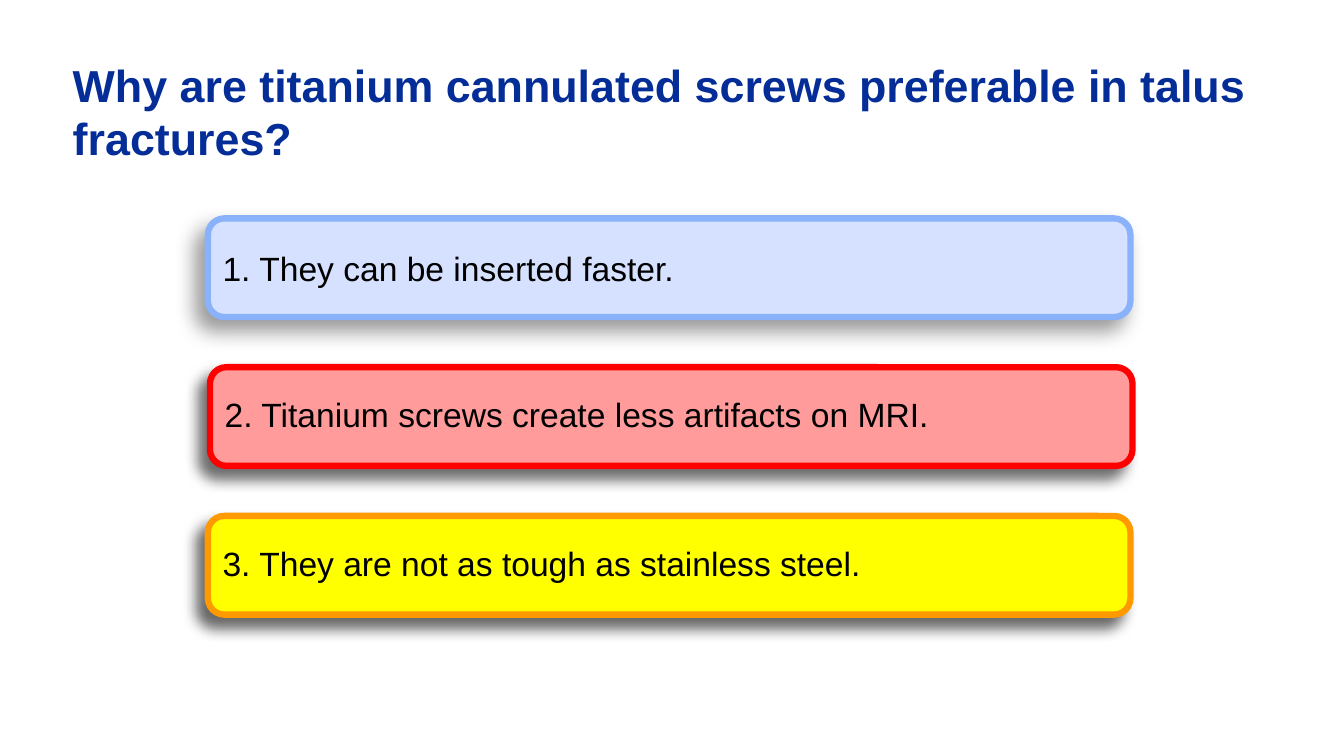
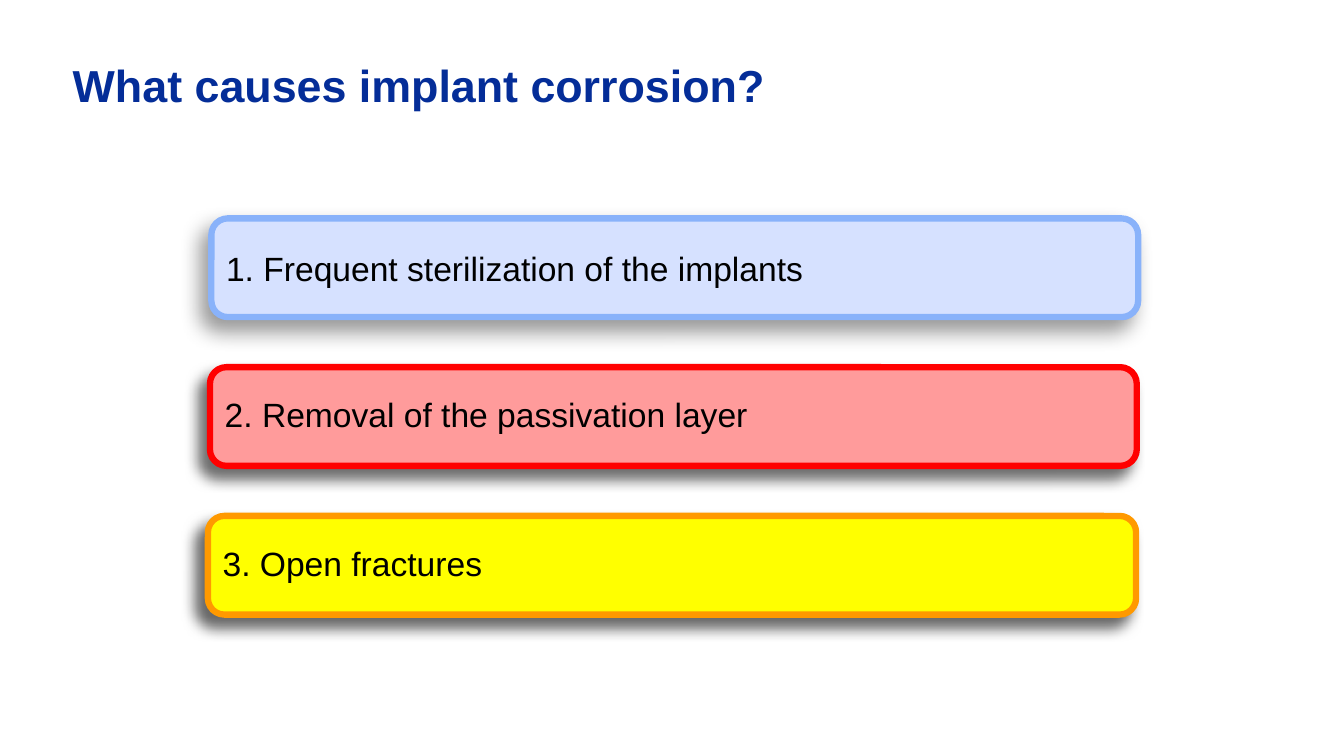
from dataclasses import dataclass

from lxml.etree import SubElement
from pptx import Presentation
from pptx.dml.color import RGBColor as Color
from pptx.enum.shapes import MSO_SHAPE as Preset
from pptx.enum.text import MSO_ANCHOR as Anchor, PP_ALIGN as Align
from pptx.oxml.ns import qn
from pptx.util import Pt


@dataclass(frozen=True)
class AnswerStyle:
    fill: str
    border: str
    shadow_opacity: int  # percent
    shadow_blur: int
    line_spacing: float


@dataclass(frozen=True)
class Theme:
    font: str = "Arial"
    title_size: int = 32
    answer_size: int = 24
    title_color: str = "042D98"
    text_color: str = "000000"
    shadow_color: str = "000000"
    border_width: float = 4.5
    shadow_distance: int = 10
    shadow_angle: int = 135
    answers: tuple = (
        AnswerStyle("D6E1FF", "89B2FA", 40, 15, 1.0),
        AnswerStyle("FF9B9B", "FF0000", 56, 10, 0.9),
        AnswerStyle("FFFF00", "FF9900", 58, 10, 0.9),
    )


THEME = Theme()
ANSWER_TOP, ANSWER_STEP, ANSWER_HEIGHT = 156, 106.25, 70.5

# Each answer: text, left edge, width
QUESTIONS = [
    ("Why are titanium cannulated screws preferable in talus fractures?", [
        ("1. They can be inserted faster.", 148.5, 659),
        ("2. Titanium screws create less artifacts on MRI.", 150, 659),
        ("3. They are not as tough as stainless steel.", 148.5, 659),
    ]),
    ("What causes implant corrosion?", [
        ("1. Frequent sterilization of the implants", 151, 662),
        ("2. Removal of the passivation layer", 150, 662),
        ("3. Open fractures", 148.5, 663),
    ]),
]


def write_text(shape, text, size, color, bold=False, line_spacing=1.0):
    shape.text_frame.word_wrap = True
    paragraph = shape.text_frame.paragraphs[0]
    paragraph.alignment = Align.LEFT
    paragraph.line_spacing = line_spacing
    run = paragraph.add_run()
    run.text = text
    run.font.name = THEME.font
    run.font.size = Pt(size)
    run.font.bold = bold
    run.font.color.rgb = Color.from_string(color)


def add_shadow(shape, style):
    shape.shadow.inherit = False
    effects = shape._element.spPr.find(qn("a:effectLst"))
    shadow = SubElement(effects, qn("a:outerShdw"), {
        "blurRad": str(Pt(style.shadow_blur)),
        "dist": str(Pt(THEME.shadow_distance)),
        "dir": str(THEME.shadow_angle * 60000),
        "algn": "ctr",
        "rotWithShape": "0",
    })
    color = SubElement(shadow, qn("a:srgbClr"), val=THEME.shadow_color)
    SubElement(color, qn("a:alpha"), val=str(style.shadow_opacity * 1000))


presentation = Presentation()
presentation.slide_width = Pt(960)
presentation.slide_height = Pt(540)

for question, answers in QUESTIONS:
    slide = presentation.slides.add_slide(presentation.slide_layouts[6])

    title = slide.shapes.add_textbox(Pt(52), Pt(41), Pt(856), Pt(76))
    frame = title.text_frame
    frame.margin_left = frame.margin_top = frame.margin_right = frame.margin_bottom = 0
    write_text(title, question, THEME.title_size, THEME.title_color, bold=True)

    for row, ((text, left, width), style) in enumerate(zip(answers, THEME.answers)):
        box = slide.shapes.add_shape(
            Preset.ROUNDED_RECTANGLE, Pt(left), Pt(ANSWER_TOP + row * ANSWER_STEP),
            Pt(width), Pt(ANSWER_HEIGHT))
        box.fill.solid()
        box.fill.fore_color.rgb = Color.from_string(style.fill)
        box.line.color.rgb = Color.from_string(style.border)
        box.line.width = Pt(THEME.border_width)
        add_shadow(box, style)
        box.text_frame.vertical_anchor = Anchor.MIDDLE
        write_text(box, text, THEME.answer_size, THEME.text_color,
                   line_spacing=style.line_spacing)

presentation.save("out.pptx")
